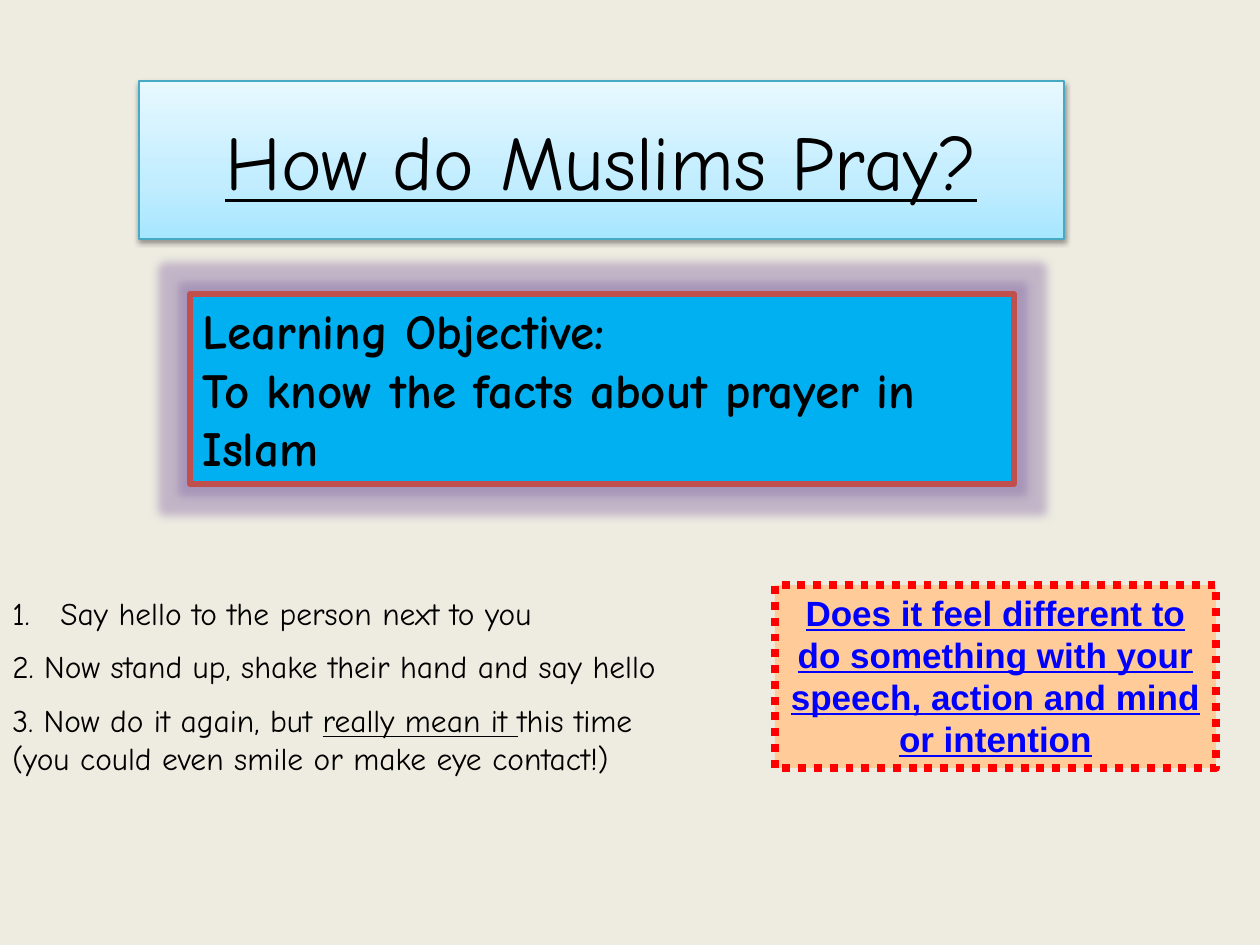
from lxml.etree import SubElement
from pptx import Presentation
from pptx.dml.color import RGBColor
from pptx.enum.dml import MSO_LINE
from pptx.enum.shapes import MSO_SHAPE
from pptx.enum.text import MSO_ANCHOR, PP_ALIGN
from pptx.oxml import parse_xml
from pptx.oxml.ns import nsdecls, qn
from pptx.util import Pt

PX = 914400 / 126
COLORS = {
    "page": "EEECE1", "text": "000000", "title_line": "46AAC5",
    "objective": "00B0F0", "objective_line": "C0504D", "glow": "8064A2",
    "question": "FFCC99", "question_line": "FF0000", "question_text": "0000FF",
}
TITLE_STOPS = [(0, "A7E6FF"), (35, "C1EDFF"), (100, "E7F8FF")]
HAND_FONT = "Comic Neue"


def px(length):
    return round(length * PX)


def color(name):
    return RGBColor.from_string(COLORS[name])


def add_panel(page, box, line, width, fill=None):
    panel = page.shapes.add_shape(MSO_SHAPE.RECTANGLE, *map(px, box))
    panel.shadow.inherit = False
    if fill:
        panel.fill.solid()
        panel.fill.fore_color.rgb = color(fill)
    panel.line.color.rgb = color(line)
    panel.line.width = Pt(width)
    return panel


def add_effect(shape, xml):
    shape._element.spPr.find(qn("a:effectLst")).append(parse_xml(xml))


def write(frame, paragraphs, size, font=HAND_FONT, ink="text",
          align=PP_ALIGN.LEFT, anchor=MSO_ANCHOR.TOP, bold=False, underline=False):
    """Fill a frame; each paragraph is a list of spans."""
    frame.word_wrap = True
    frame.vertical_anchor = anchor
    for index, spans in enumerate(paragraphs):
        para = frame.add_paragraph() if index else frame.paragraphs[0]
        para.alignment = align
        for text in spans:
            span = para.add_run()
            span.text = text
            span.font.name = font
            span.font.size = Pt(size)
            span.font.bold = bold
            span.font.underline = underline
            span.font.color.rgb = color(ink)


def add_title(page, box):
    panel = add_panel(page, box, "title_line", 0.75)
    # Three-stop gradient, running from the bottom up
    panel.fill.gradient()
    gradient = panel._element.spPr.find(qn("a:gradFill"))
    stops = gradient.find(qn("a:gsLst"))
    for stop in list(stops):
        stops.remove(stop)
    for percent, value in TITLE_STOPS:
        stop = SubElement(stops, qn("a:gs"), pos=str(percent * 1000))
        SubElement(stop, qn("a:srgbClr"), val=value)
    gradient.find(qn("a:lin")).set("ang", str(270 * 60000))
    add_effect(panel, f'<a:outerShdw {nsdecls("a")} blurRad="{Pt(3.1)}" dist="{Pt(1.6)}" '
                      f'dir="5400000" rotWithShape="0"><a:srgbClr val="{COLORS["text"]}">'
                      '<a:alpha val="38000"/></a:srgbClr></a:outerShdw>')
    write(panel.text_frame, [["How do Muslims Pray?"]], 44, align=PP_ALIGN.CENTER,
          anchor=MSO_ANCHOR.MIDDLE, underline=True)


def add_objective(page, box):
    panel = add_panel(page, box, "objective_line", 3, "objective")
    add_effect(panel, f'<a:glow {nsdecls("a")} rad="{Pt(11)}"><a:srgbClr val="{COLORS["glow"]}">'
                      '<a:alpha val="40000"/></a:srgbClr></a:glow>')
    write(panel.text_frame,
          [["Learning Objective:"], ["To know the facts about prayer in Islam"]],
          28, bold=True)


def add_question(page, box):
    panel = add_panel(page, box, "question_line", 4.5, "question")
    panel.line.dash_style = MSO_LINE.ROUND_DOT  # written as sysDot
    write(panel.text_frame,
          [["Does it feel different to do something with your speech, action and mind or intention"]],
          20, font="Arial", ink="question_text", align=PP_ALIGN.CENTER,
          bold=True, underline=True)


def add_steps(page, box):
    left, top, width, height = box
    steps = [
        (0, 50, [["Say hello to the person next to you"]]),
        (53, 50, [["2. Now stand up, shake their hand and say hello"]]),
        (107, height - 107, [["3. Now do it again, but ", "really mean it ", "this time"],
                             ["(you could even smile or make eye contact!)"]]),
    ]
    frames = []
    for offset, step_height, paragraphs in steps:
        area = (left, top + offset, width, step_height)
        frame = page.shapes.add_textbox(*map(px, area)).text_frame
        write(frame, paragraphs, 18)
        frames.append(frame)
    # The first step is numbered automatically, with a hanging indent
    numbered = frames[0].paragraphs[0]._p.get_or_add_pPr()
    numbered.set("marL", str(px(48)))
    numbered.set("indent", str(px(-48)))
    SubElement(numbered, qn("a:buFont"), typeface=HAND_FONT)
    SubElement(numbered, qn("a:buAutoNum"), type="arabicPeriod")
    # Stress in the last step
    frames[-1].paragraphs[0].runs[1].font.underline = True


def main():
    deck = Presentation()
    deck.slide_width, deck.slide_height = px(1260), px(945)
    page = deck.slides.add_slide(deck.slide_layouts[6])
    page.background.fill.solid()
    page.background.fill.fore_color.rgb = color("page")

    add_title(page, (139, 81, 925, 158))
    add_question(page, (775, 585, 441, 183))
    add_objective(page, (190, 294, 824, 190))
    add_steps(page, (0, 588, 993, 196))
    deck.save("out.pptx")


if __name__ == "__main__":
    main()
